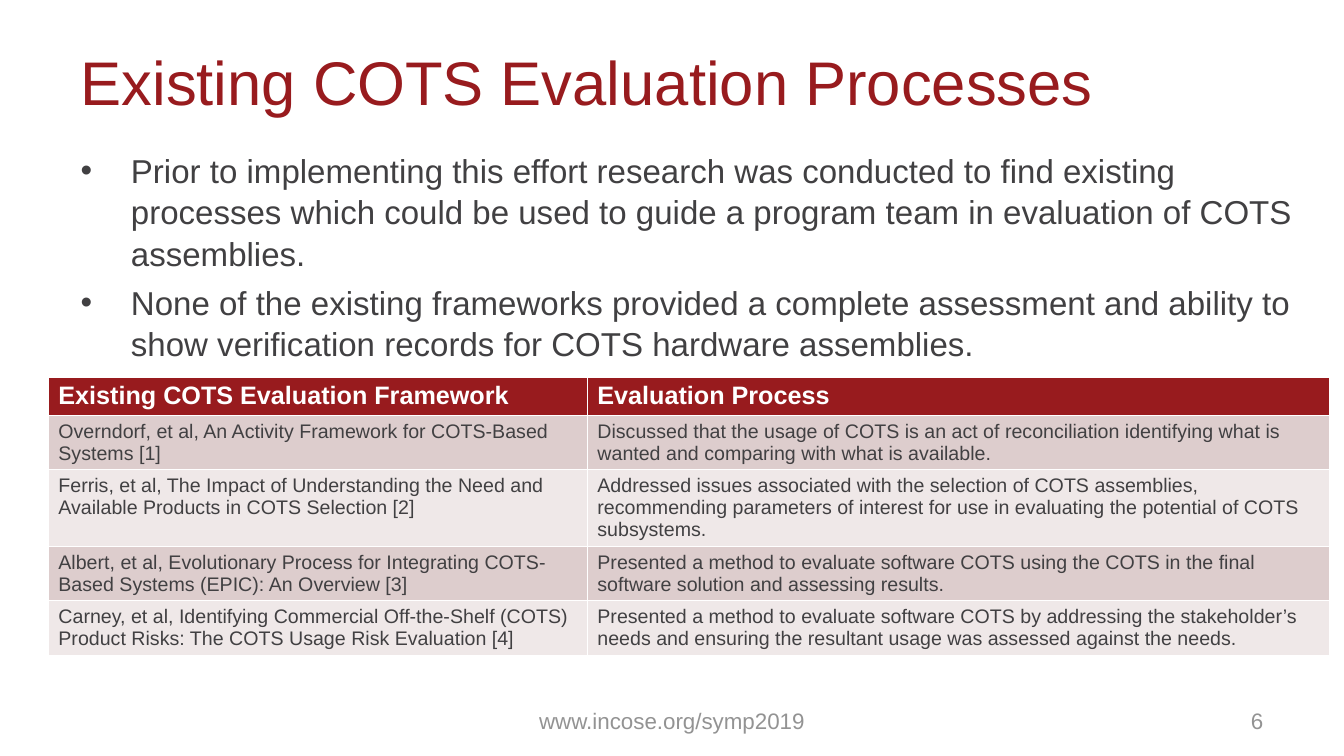
"""Builds the slide on existing COTS evaluation processes."""
from pptx import Presentation
from pptx.dml.color import RGBColor
from pptx.enum import text as tx
from pptx.oxml import parse_xml
from pptx.oxml.ns import nsdecls
from pptx.util import Inches, Pt

RED, INK, GREY, WHITE = "981B1E", "414042", "939393", "FFFFFF"
BANDS = ["DDCDCD", "EFE8E8"]
TITLE = "Existing COTS Evaluation Processes"
POINTS = [
    "Prior to implementing this effort research was conducted to find existing processes "
    "which could be used to guide a program team in evaluation of COTS assemblies.",
    "None of the existing frameworks provided a complete assessment and ability to show "
    "verification records for COTS hardware assemblies.",
]
FOOTERS = [
    ("www.incose.org/symp2019", (4.56, 6.95, 4.22, 0.4), tx.PP_ALIGN.CENTER),
    ("6", (9.56, 6.95, 3.11, 0.4), tx.PP_ALIGN.RIGHT),
]
FRAMEWORKS = [
    ("Existing COTS Evaluation Framework", "Evaluation Process"),
    ("Overndorf, et al, An Activity Framework for COTS-Based Systems [1]",
     "Discussed that the usage of COTS is an act of reconciliation identifying what is "
     "wanted and comparing with what is available."),
    ("Ferris, et al, The Impact of Understanding the Need and Available Products in COTS "
     "Selection [2]",
     "Addressed issues associated with the selection of COTS assemblies, recommending "
     "parameters of interest for use in evaluating the potential of COTS subsystems."),
    ("Albert, et al, Evolutionary Process for Integrating COTS-Based Systems (EPIC): "
     "An Overview [3]",
     "Presented a method to evaluate software COTS using the COTS in the final software "
     "solution and assessing results."),
    ("Carney, et al, Identifying Commercial Off-the-Shelf (COTS) Product Risks: The COTS "
     "Usage Risk Evaluation [4]",
     "Presented a method to evaluate software COTS by addressing the stakeholder’s needs "
     "and ensuring the resultant usage was assessed against the needs."),
]
COLUMN_WIDTHS = [5.35, 7.37]
ROW_HEIGHTS = [0.37, 0.54, 0.76, 0.54, 0.54]


def color(value):
    return RGBColor.from_string(value)


def style(paragraph, size, ink, bold=False):
    for run in paragraph.runs:
        run.font.name = "Arial"
        run.font.size = Pt(size)
        run.font.bold = bold
        run.font.color.rgb = color(ink)


def prepare(frame, anchor):
    frame.word_wrap = True
    frame.auto_size = tx.MSO_AUTO_SIZE.NONE
    frame.vertical_anchor = anchor
    frame.margin_left = frame.margin_right = Inches(0.13)
    frame.margin_top = frame.margin_bottom = Inches(0.07)


def add_title(slide):
    title = slide.shapes.title
    title.left, title.top, title.width, title.height = map(Inches, (0.67, 0.3, 12.01, 1.01))
    prepare(title.text_frame, tx.MSO_ANCHOR.MIDDLE)
    title.text_frame.text = TITLE
    heading = title.text_frame.paragraphs[0]
    heading.alignment = tx.PP_ALIGN.LEFT
    style(heading, 44, RED)


def add_points(slide):
    frame = slide.shapes.add_textbox(*map(Inches, (0.67, 1.4, 12.33, 2.34))).text_frame
    prepare(frame, tx.MSO_ANCHOR.TOP)
    frame.text = "\n".join(POINTS)
    for index, point in enumerate(frame.paragraphs):
        point.line_spacing = 1.05
        point.space_before = Pt(5 if index else 0)
        properties = point._p.get_or_add_pPr()
        properties.set("marL", str(Inches(0.5)))
        properties.set("indent", str(Inches(-0.5)))
        properties.append(parse_xml(f'<a:buFont {nsdecls("a")} typeface="Arial"/>'))
        properties.append(parse_xml(f'<a:buChar {nsdecls("a")} char="•"/>'))
        style(point, 23.6, INK)


def add_frameworks(slide):
    table = slide.shapes.add_table(
        len(ROW_HEIGHTS), len(COLUMN_WIDTHS), Inches(0.48), Inches(3.74),
        Inches(sum(COLUMN_WIDTHS)), Inches(sum(ROW_HEIGHTS))).table
    for column, width in zip(table.columns, COLUMN_WIDTHS):
        column.width = Inches(width)
    for index, (row, entries) in enumerate(zip(table.rows, FRAMEWORKS)):
        row.height = Inches(ROW_HEIGHTS[index])
        header = index == 0
        for cell, entry in zip(row.cells, entries):
            cell.text = entry
            cell.fill.solid()
            cell.fill.fore_color.rgb = color(RED if header else BANDS[(index - 1) % 2])
            style(cell.text_frame.paragraphs[0], 18 if header else 14,
                  WHITE if header else INK, header)


def add_footers(slide):
    for label, place, alignment in FOOTERS:
        frame = slide.shapes.add_textbox(*map(Inches, place)).text_frame
        prepare(frame, tx.MSO_ANCHOR.MIDDLE)
        frame.text = label
        frame.paragraphs[0].alignment = alignment
        style(frame.paragraphs[0], 16, GREY)


def main():
    deck = Presentation()
    deck.slide_width, deck.slide_height = Inches(13.34), Inches(7.5)
    slide = deck.slides.add_slide(deck.slide_layouts[5])
    add_title(slide)
    add_points(slide)
    add_footers(slide)
    add_frameworks(slide)
    deck.save("out.pptx")


if __name__ == "__main__":
    main()
